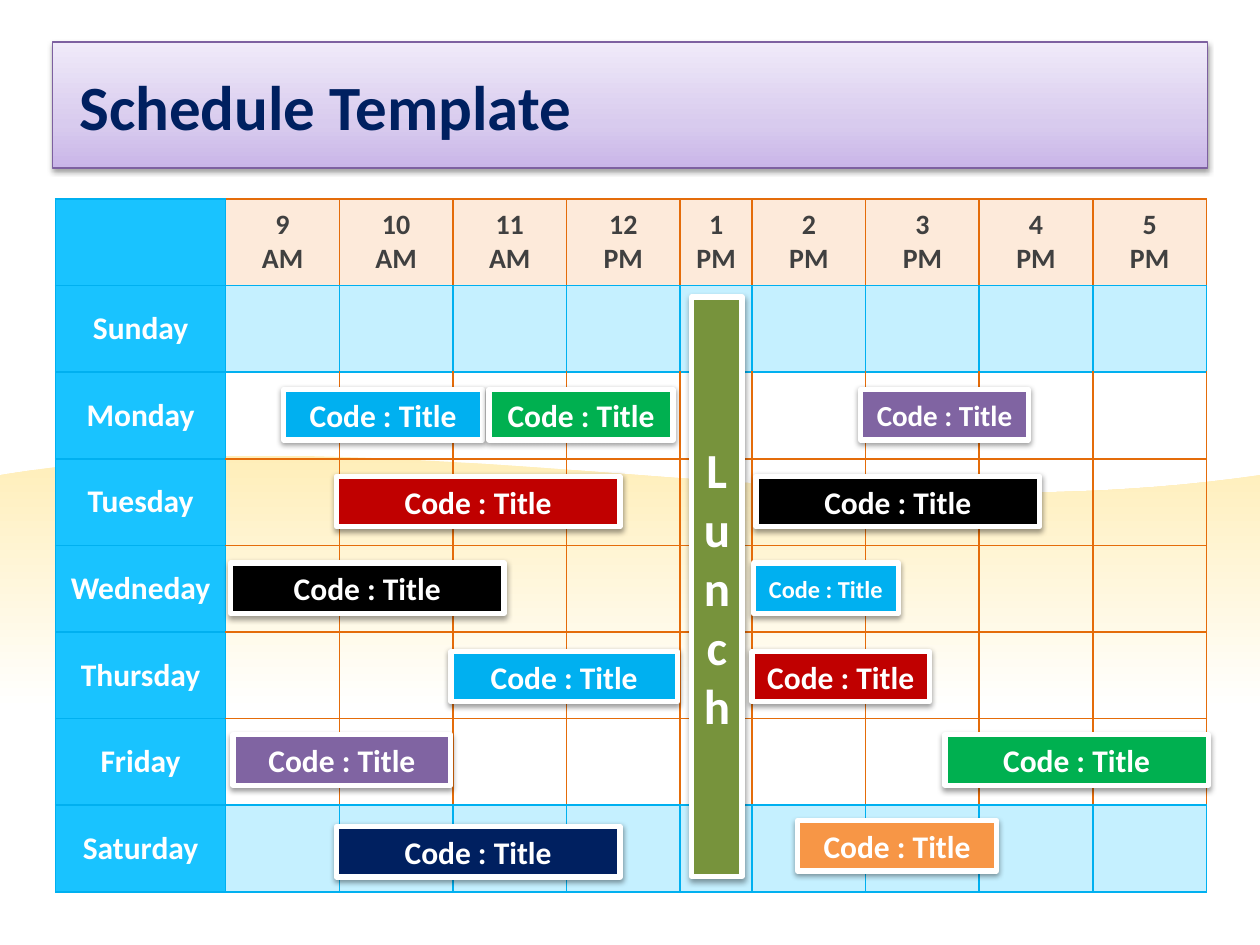
from dataclasses import dataclass

from lxml import etree
from pptx import Presentation
from pptx.dml.color import RGBColor
from pptx.enum.shapes import MSO_SHAPE
from pptx.enum.text import MSO_ANCHOR, PP_ALIGN
from pptx.oxml.ns import qn
from pptx.util import Cm, Pt

RECTANGLE = MSO_SHAPE.RECTANGLE
TITLE_SHAPE = MSO_SHAPE.SNIP_ROUND_RECTANGLE
MIDDLE = MSO_ANCHOR.MIDDLE
LEFT, CENTER = PP_ALIGN.LEFT, PP_ALIGN.CENTER


@dataclass(frozen=True)
class Theme:
    font: str = "Calibri"
    white: str = "FFFFFF"
    black: str = "000000"
    navy: str = "002060"
    blue: str = "00B0F0"
    green: str = "00B050"
    red: str = "C00000"
    purple: str = "8064A2"
    orange: str = "F79646"
    olive: str = "77933C"
    title_line: str = "7D60A0"
    header_text: str = "404040"
    header_fill: str = "FDEADA"
    day_fill: str = "19C3FF"
    weekend_fill: str = "C5F0FF"
    grid_line: str = "E46C0A"
    title_size: float = 36
    lunch_size: float = 28
    body_size: float = 18
    header_size: float = 16


THEME = Theme()
TITLE_STOPS = ((0, "C9B5E8"), (35, "D8CBEE"), (100, "F0EAF9"))
WAVE_STOPS = ((0, "FFEEB9"), (52, "FFFFFF"), (100, "FFFFFF"))
DAYS = ("Sunday", "Monday", "Tuesday", "Wedneday", "Thursday", "Friday", "Saturday")
HOURS = ("9\nAM", "10\nAM", "11\nAM", "12\nPM", "1\nPM", "2\nPM", "3\nPM", "4\nPM", "5\nPM")
WEEKEND_ROWS = (1, 7)
LUNCH_COLUMN = 5


@dataclass(frozen=True)
class Block:
    left: float
    top: float
    width: float
    color: str
    size: float = THEME.body_size
    text: str = "Code : Title"
    height: float = 1.02


MONDAY, TUESDAY, WEDNESDAY, THURSDAY, FRIDAY = 7.85, 9.6, 11.35, 13.13, 14.81
BLOCKS = (
    Block(5.72, MONDAY, 4.01, THEME.blue),
    Block(16.08, 16.54, 4.01, THEME.orange),
    Block(17.35, MONDAY, 3.38, THEME.purple, 16.6),
    Block(6.78, TUESDAY, 5.72, THEME.red),
    Block(9.86, MONDAY, 3.71, THEME.green),
    Block(4.65, WEDNESDAY, 5.51, THEME.black),
    Block(15.19, WEDNESDAY, 2.92, THEME.blue, 13.9),
    Block(15.24, TUESDAY, 5.72, THEME.black),
    Block(13.94, 5.99, 1.02, THEME.olive, THEME.lunch_size, "Lunch", 11.68),
    Block(9.09, THURSDAY, 4.57, THEME.blue),
    Block(6.78, 16.66, 5.72, THEME.navy),
    Block(15.16, THURSDAY, 3.58, THEME.red),
    Block(4.7, FRIDAY, 4.39, THEME.purple),
    Block(19.05, FRIDAY, 5.31, THEME.green),
)


def write(frame, text: str, size: float, color: str, align=CENTER) -> None:
    frame.text = text
    for para in frame.paragraphs:
        para.alignment = align
        for span in para.runs:
            span.font.name = THEME.font
            span.font.size = Pt(size)
            span.font.bold = True
            span.font.color.rgb = RGBColor.from_string(color)


def add_color(parent, color: str):
    return etree.SubElement(parent, qn("a:srgbClr"), val=color)


def fill_gradient(shape, stops: tuple, angle: float) -> None:
    shape.fill.gradient()
    shape.fill.gradient_angle = angle
    stop_list = shape.element.spPr.find(".//" + qn("a:gsLst"))
    for old_stop in list(stop_list):
        stop_list.remove(old_stop)
    for position, color in stops:
        add_color(etree.SubElement(stop_list, qn("a:gs"), pos=str(position * 1000)), color)


def add_shadow(shape) -> None:
    shape.shadow.inherit = False
    effects = shape.element.spPr.find(qn("a:effectLst"))
    shadow = etree.SubElement(effects, qn("a:outerShdw"), blurRad="40000", dist="20000",
                              dir="5400000", rotWithShape="0")
    etree.SubElement(add_color(shadow, THEME.black), qn("a:alpha"), val="38000")


def set_line(shape, color: str, width: float) -> None:
    shape.line.color.rgb = RGBColor.from_string(color)
    shape.line.width = Pt(width)


def curve(start: tuple, first: tuple, second: tuple, end: tuple, steps: int = 40) -> list:
    points = []
    for step in range(1, steps + 1):
        t = step / steps
        weights = ((1 - t) ** 3, 3 * t * (1 - t) ** 2, 3 * t * t * (1 - t), t ** 3)
        controls = (start, first, second, end)
        points.append(tuple(Cm(sum(w * p[axis] for w, p in zip(weights, controls)))
                            for axis in (0, 1)))
    return points


def draw_wave(page) -> None:
    left, crest, right = (0, 9.58), (4.78, 9.19), (25.4, 9.58)
    outline = curve(left, (1.57, 9.32), (3.18, 9.22), crest)
    outline += curve(crest, (11.63, 9.12), (18.52, 10.59), right)
    outline += [(Cm(25.4), Cm(19.05)), (Cm(0), Cm(19.05))]
    builder = page.shapes.build_freeform(Cm(left[0]), Cm(left[1]))
    builder.add_line_segments(outline, close=True)
    wave = builder.convert_to_shape()
    wave.shadow.inherit = False
    fill_gradient(wave, WAVE_STOPS, 270)
    wave.line.fill.background()


def draw_title(page) -> None:
    title = page.shapes.add_shape(TITLE_SHAPE, Cm(1.06), Cm(0.85), Cm(23.28), Cm(2.54))
    title.adjustments[0] = title.adjustments[1] = 0
    fill_gradient(title, TITLE_STOPS, 90)
    set_line(title, THEME.title_line, 0.75)
    add_shadow(title)
    frame = title.text_frame
    frame.word_wrap = True
    frame.vertical_anchor = MIDDLE
    frame.margin_left = Cm(0.54)
    write(frame, "Schedule Template", THEME.title_size, THEME.navy, LEFT)


def is_blue(row: int, column: int) -> bool:
    return column == 0 or row in WEEKEND_ROWS


def set_borders(cell, row: int, column: int) -> None:
    neighbours = {"a:lnL": (row, column - 1), "a:lnR": (row, column + 1),
                  "a:lnT": (row - 1, column), "a:lnB": (row + 1, column)}
    properties = cell._tc.get_or_add_tcPr()
    for index, (tag, neighbour) in enumerate(neighbours.items()):
        blue = is_blue(row, column) or is_blue(*neighbour)
        border = etree.Element(qn(tag), w=str(Pt(1)))
        add_color(etree.SubElement(border, qn("a:solidFill")),
                  THEME.blue if blue else THEME.grid_line)
        properties.insert(index, border)


def fill_cell(cell, row: int, column: int) -> None:
    cell.vertical_anchor = MIDDLE
    color = None
    if column == 0:
        color = THEME.day_fill
        if row:
            write(cell.text_frame, DAYS[row - 1], THEME.body_size, THEME.white)
    elif row == 0:
        color = THEME.header_fill
        write(cell.text_frame, HOURS[column - 1], THEME.header_size, THEME.header_text)
    elif row in WEEKEND_ROWS:
        color = THEME.weekend_fill
    if color:
        cell.fill.solid()
        cell.fill.fore_color.rgb = RGBColor.from_string(color)
    else:
        cell.fill.background()
    set_borders(cell, row, column)


def draw_timetable(page) -> None:
    row_count, column_count = len(DAYS) + 1, len(HOURS) + 1
    table = page.shapes.add_table(row_count, column_count, Cm(1.12), Cm(4.01),
                                  Cm(23.2), Cm(13.97)).table
    table.first_row = table.horz_banding = False
    for index, column in enumerate(table.columns):
        column.width = Cm({0: 3.43, LUNCH_COLUMN: 1.45}.get(index, 2.29))
    for row in range(row_count):
        for column in range(column_count):
            fill_cell(table.cell(row, column), row, column)


def draw_block(page, block: Block) -> None:
    box = page.shapes.add_shape(RECTANGLE, Cm(block.left), Cm(block.top),
                                Cm(block.width), Cm(block.height))
    box.fill.solid()
    box.fill.fore_color.rgb = RGBColor.from_string(block.color)
    set_line(box, THEME.white, 3)
    add_shadow(box)
    box.text_frame.word_wrap = True
    box.text_frame.vertical_anchor = MIDDLE
    write(box.text_frame, block.text, block.size, THEME.white)


def main() -> None:
    deck = Presentation()
    deck.slide_width, deck.slide_height = Cm(25.4), Cm(19.05)
    page = deck.slides.add_slide(deck.slide_layouts[6])
    draw_wave(page)
    draw_title(page)
    draw_timetable(page)
    for block in BLOCKS:
        draw_block(page, block)
    deck.save("out.pptx")


if __name__ == "__main__":
    main()
